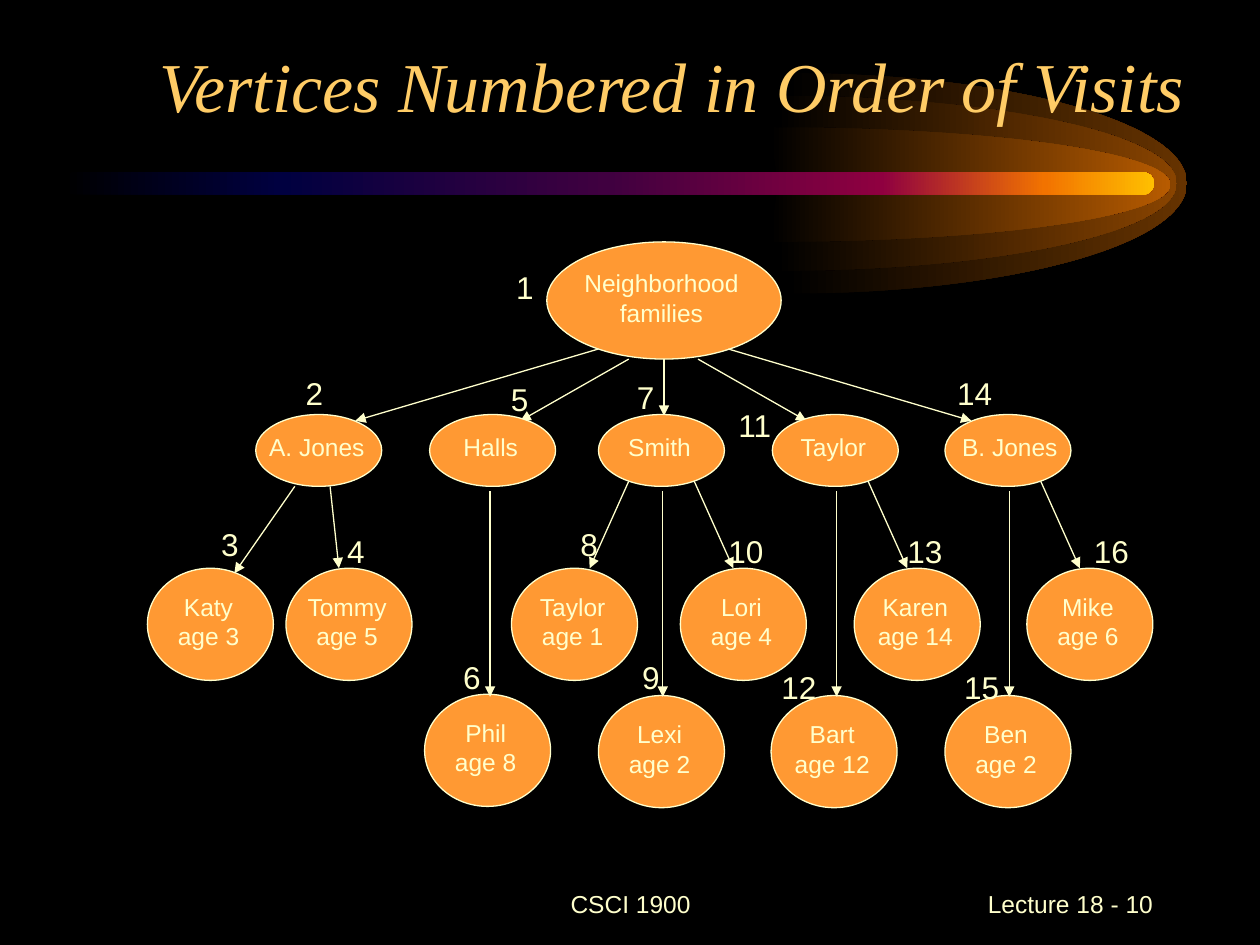
from lxml import etree
from pptx import Presentation
from pptx.dml.color import RGBColor
from pptx.enum.shapes import MSO_CONNECTOR, MSO_SHAPE
from pptx.enum.text import MSO_ANCHOR, PP_ALIGN
from pptx.oxml.ns import qn
from pptx.util import Inches, Pt

STRAIGHT = MSO_CONNECTOR.STRAIGHT
OVAL, ROUNDED = MSO_SHAPE.OVAL, MSO_SHAPE.ROUNDED_RECTANGLE
CENTER, RIGHT = PP_ALIGN.CENTER, PP_ALIGN.RIGHT
TOP, MIDDLE, BOTTOM = MSO_ANCHOR.TOP, MSO_ANCHOR.MIDDLE, MSO_ANCHOR.BOTTOM

COLORS = {"back": "000000", "text": "FFFFCC", "title": "FFCC66", "node": "FF9933"}
BAR_STOPS = [(0, "000000"), (20, "000040"), (50, "400040"),
             (75, "8F0040"), (90, "F27300"), (100, "FFBF00")]
GLOWS = [(0.13, 0, 1.75, "663300"), (0.05, 0.18, 1.39, "894400"), (0, 0.43, 0.91, "B75B00")]

FAMILY_Y, CHILD_Y, LOW_Y = 1.37, 2.59, 3.6
LEFT_ARROW = (0.24, 1.9, -0.07, 2.59)
DOWN_ARROW = (0.51, 1.98, 0.51, 3.61)
RIGHT_ARROW = (0.76, 1.9, 1.07, 2.59)
FAMILIES = [
    ("A. Jones", 1.03, [("Katy\nage 3", -0.86, CHILD_Y, (0.31, 1.94, -0.17, 2.63)),
                        ("Tommy\nage 5", 0.24, CHILD_Y, (0.59, 1.94, 0.66, 2.59))]),
    ("Halls", 2.41, [("Phil\nage 8", -0.04, LOW_Y - 0.01, (0.48, 1.98, 0.48, 3.61))]),
    ("Smith", 3.75, [("Taylor\nage 1", -0.69, CHILD_Y, LEFT_ARROW),
                     ("Lexi\nage 2", 0, LOW_Y, DOWN_ARROW),
                     ("Lori\nage 4", 0.65, CHILD_Y, RIGHT_ARROW)]),
    ("Taylor", 5.13, [("Bart\nage 12", -0.01, LOW_Y, DOWN_ARROW),
                      ("Karen\nage 14", 0.65, CHILD_Y, RIGHT_ARROW)]),
    ("B. Jones", 6.5, [("Ben\nage 2", 0, LOW_Y, DOWN_ARROW),
                       ("Mike\nage 6", 0.65, CHILD_Y, RIGHT_ARROW)]),
]
ROOT_ARROWS = [(3.75, 0.85, 1.82, 1.42), (3.99, 0.93, 3.13, 1.42), (4.27, 0.93, 4.27, 1.38),
               (4.54, 0.93, 5.4, 1.42), (4.78, 0.85, 6.71, 1.42)]
DIGIT_W = 0.49
VISITS = [
    (2.92, 0.16, DIGIT_W), (1.25, 1, DIGIT_W), (0.58, 2.2, DIGIT_W), (1.58, 2.25, DIGIT_W),
    (2.88, 1.05, DIGIT_W), (2.5, 3.25, DIGIT_W), (3.88, 1.03, DIGIT_W), (3.43, 2.2, DIGIT_W),
    (3.92, 3.25, DIGIT_W), (4.58, 2.25, 0.68), (4.67, 1.25, 0.64), (5, 3.33, 0.68),
    (6, 2.25, 0.68), (6.42, 1, 0.63), (6.5, 3.33, 0.58), (7.5, 2.25, 0.64),
]


def rgb(name):
    """Return the named palette colour."""
    return RGBColor.from_string(COLORS[name])


def fill_gradient(sp, stops):
    """Give a shape a left-to-right gradient without outline or shadow."""
    sp.fill.gradient()
    sp.fill.gradient_angle = 0
    gs_list = sp._element.spPr.find(".//" + qn("a:gsLst"))
    for gs in list(gs_list):
        gs_list.remove(gs)
    for position, color in stops:
        gs = etree.SubElement(gs_list, qn("a:gs"), pos=str(position * 1000))
        etree.SubElement(gs, qn("a:srgbClr"), val=color)
    sp.line.fill.background()
    sp.shadow.inherit = False


def add_text(s, box, text, size, align=CENTER, anchor=TOP,
             font="Arial", color="text", italic=False):
    """Add a text box, breaking lines where the text does."""
    tf = s.shapes.add_textbox(*map(Inches, box)).text_frame
    tf.word_wrap = True
    tf.vertical_anchor = anchor
    p = tf.paragraphs[0]
    p.alignment = align
    for i, line in enumerate(text.split("\n")):
        if i:
            p.add_line_break()
        r = p.add_run()
        r.text = line
        r.font.name, r.font.size, r.font.italic = font, Pt(size), italic
        r.font.color.rgb = rgb(color)


def add_node(s, box, text, label_box):
    """Add an ellipse and its label, placed relative to the ellipse."""
    sp = s.shapes.add_shape(OVAL, *map(Inches, box))
    sp.shadow.inherit = False
    sp.fill.solid()
    sp.fill.fore_color.rgb = rgb("node")
    sp.line.color.rgb = rgb("text")
    sp.line.width = Pt(0.75)
    dx, dy, w, h = label_box
    add_text(s, (box[0] + dx, box[1] + dy, w, h), text, 14)


def add_arrow(s, x, y, ends):
    """Add an arrow whose ends are relative to a point."""
    x1, y1, x2, y2 = ends
    line = s.shapes.add_connector(STRAIGHT, Inches(x + x1), Inches(y + y1),
                                  Inches(x + x2), Inches(y + y2))
    line.line.color.rgb = rgb("text")
    line.line.width = Pt(0.75)
    etree.SubElement(line.line._get_or_add_ln(), qn("a:tailEnd"), type="triangle")
    etree.SubElement(line._element.spPr, qn("a:effectLst"))


def add_half_ellipse(s, x, y, w, h, color):
    """Add the right half of an ellipse from two curves, fading in."""
    fractions = [(0, 0), (0.55, 0), (1, 0.22), (1, 0.5),
                 (1, 0.78), (0.55, 1), (0, 1), (0.02, 0.5)]
    points = [(Inches(x + w * fx), Inches(y + h * fy)) for fx, fy in fractions]
    outline = s.shapes.build_freeform(*points[0])
    outline.add_line_segments(points[1:])
    sp = outline.convert_to_shape()
    segments = list(sp._element.spPr.iter(qn("a:lnTo")))
    for trio in (segments[:3], segments[3:6]):
        curve = etree.Element(qn("a:cubicBezTo"))
        trio[0].addprevious(curve)
        for segment in trio:
            curve.append(segment[0])
            segment.getparent().remove(segment)
    fill_gradient(sp, [(0, COLORS["back"]), (100, color)])


def add_comet(s, x, y, w, h):
    """Draw the glowing comet under the title."""
    glow_w = 3.18
    for dx, dy, glow_h, color in GLOWS:
        add_half_ellipse(s, x + w - 0.13 - glow_w + dx, y + dy, glow_w, glow_h, color)
    bar_h = 0.18
    bar = s.shapes.add_shape(ROUNDED, Inches(x), Inches(y + (h - bar_h) / 2),
                             Inches(8.66), Inches(bar_h))
    bar.adjustments[0] = 0.5
    fill_gradient(bar, BAR_STOPS)


def add_tree(s, x, y):
    """Draw the family tree with its visit numbers from a top-left corner."""
    add_node(s, (x + 3.34, y, 1.86, 0.93), "Neighborhood\nfamilies", (0, 0.16, 1.82, 0.57))
    for ends in ROOT_ARROWS:
        add_arrow(s, x, y, ends)
    for name, fx, children in FAMILIES:
        add_node(s, (x + fx, y + FAMILY_Y, 1, 0.57), name,
                 (-0.14 if name == "B. Jones" else -0.17, 0.09, 1.31, 0.33))
        for text, dx, cy, ends in children:
            add_node(s, (x + fx + dx, y + cy, 1, 0.89), text, (-0.17, 0.14, 1.31, 0.57))
            add_arrow(s, x + fx, y, ends)
    for number, (dx, dy, w) in enumerate(VISITS, 1):
        add_text(s, (x + dx, y + dy, w, 0.4), str(number), 18)


def add_footer(s, x, y, w, h):
    """Add the course name and the lecture number."""
    add_text(s, (x, y, 3.17, h), "CSCI 1900", 14, anchor=MIDDLE)
    add_text(s, (x + w - 2.08, y, 2.08, h), "Lecture 18 - 10", 14, RIGHT, MIDDLE)


def main():
    """Build and save the slide."""
    prs = Presentation()
    prs.slide_width, prs.slide_height = Inches(10), Inches(7.5)
    s = prs.slides.add_slide(prs.slide_layouts[6])
    s.background.fill.solid()
    s.background.fill.fore_color.rgb = rgb("back")
    add_comet(s, 0.5, 0.58, 8.92, 1.75)
    add_footer(s, 3.42, 6.92, 5.83, 0.5)
    add_text(s, (0.5, 0.25, 9, 0.8), "Vertices Numbered in Order of Visits", 40,
             RIGHT, BOTTOM, "Times New Roman", "title", True)
    add_tree(s, 1, 1.92)
    prs.save("out.pptx")


if __name__ == "__main__":
    main()
